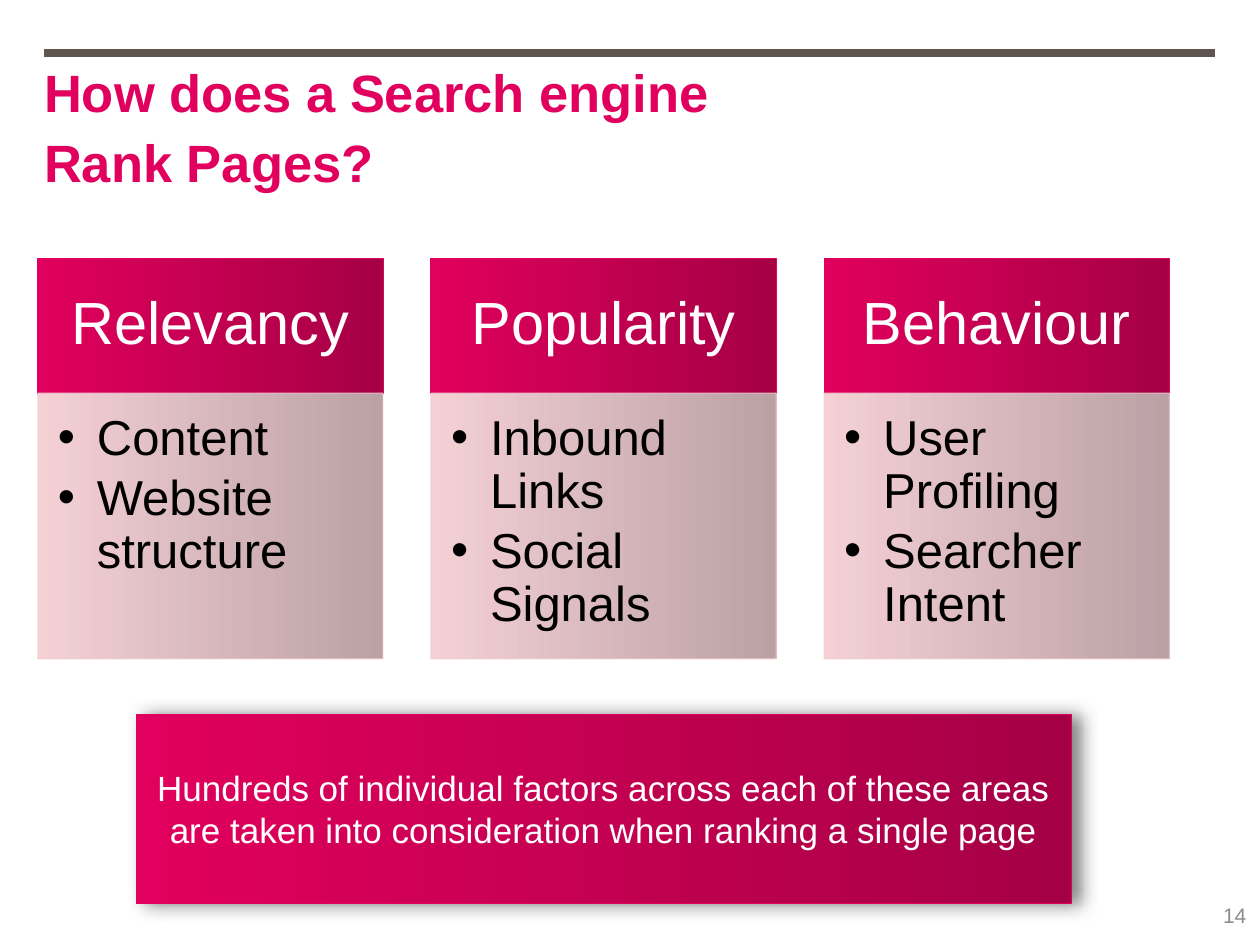
from lxml.etree import SubElement as Sub
from pptx import Presentation
from pptx.dml.color import RGBColor as Rgb
from pptx.enum.shapes import MSO_CONNECTOR as Conn, MSO_SHAPE as Kind
from pptx.enum.text import MSO_ANCHOR as Anchor, PP_ALIGN as Align
from pptx.oxml.ns import qn
from pptx.util import Inches, Pt

PINK, WINE, ROSE, MAUVE = "E1005D", "A60045", "F4CCD2", "B4979B"
WHITE, BLACK, GREY, BROWN = "FFFFFF", "000000", "8C8C8C", "5F574F"
LEFT, STEP, WIDE = 3, 31.2, 27.4
TOP, HEAD, BODY = 20.5, 10.7, 21.1
AREAS = {
    "Relevancy": ["Content", "Website structure"],
    "Popularity": ["Inbound Links", "Social Signals"],
    "Behaviour": ["User Profiling", "Searcher Intent"],
}


def tint(code):
    """Turn a hex string into a colour."""
    return Rgb.from_string(code)


class Deck:
    """Holds the style and the current slide, on a grid of 100 by 75 cells."""

    font = "Arial"

    def __init__(self):
        """Open a deck with one blank slide."""
        self.prs = Presentation()
        self.prs.slide_width, self.prs.slide_height = Inches(10), Inches(7.5)
        self.cell = self.prs.slide_width / 100
        self.slide = self.prs.slides.add_slide(self.prs.slide_layouts[6])

    def span(self, *cells):
        """Turn grid cells into lengths."""
        return [round(n * self.cell) for n in cells]

    def rule(self, x, y, end, color, width):
        """Draw a level line."""
        line = self.slide.shapes.add_connector(Conn.STRAIGHT, *self.span(x, y, end, y))
        line.line.color.rgb, line.line.width = tint(color), Pt(width)
        Sub(line._element.spPr, qn("a:effectLst"))

    def fill_text(self, shape, lines, size, color, inset, align=Align.LEFT,
                  anchor=Anchor.TOP, bold=False, lead=1.0, after=0):
        """Set the text of a shape."""
        frame = shape.text_frame
        frame.text = "\n".join(lines)
        frame.word_wrap, frame.vertical_anchor = True, anchor
        (frame.margin_left, frame.margin_top,
         frame.margin_right, frame.margin_bottom) = self.span(*inset)
        for para in frame.paragraphs:
            para.alignment, para.line_spacing = align, lead
            para.space_after = Pt(after)
            for run in para.runs:
                font = run.font
                font.name, font.size, font.bold = self.font, Pt(size), bold
                font.color.rgb = tint(color)

    def label(self, area, text, size, color, **look):
        """Add a plain text box."""
        box = self.slide.shapes.add_textbox(*self.span(*area))
        self.fill_text(box, [text], size, color, (0, 0, 0, 0), **look)

    def panel(self, area, start, end, alpha=100):
        """Add a box with a gradient from left to right."""
        box = self.slide.shapes.add_shape(Kind.RECTANGLE, *self.span(*area))
        box.shadow.inherit = False
        box.fill.gradient()
        box.fill.gradient_angle = 0
        for place, (stop, code) in enumerate(zip(box.fill.gradient_stops, (start, end))):
            stop.color.rgb, stop.position = tint(code), place
        box.line.color.rgb, box.line.width = tint(start), Pt(0.5)
        if alpha < 100:
            for node in box._element.spPr.iter(qn("a:srgbClr")):
                Sub(node, qn("a:alpha"), val=str(alpha * 1000))
        return box

    def bullet(self, box, indent):
        """Give each paragraph a hanging bullet."""
        gap = self.span(indent)[0]
        for para in box.text_frame.paragraphs:
            props = para._p.get_or_add_pPr()
            props.set("marL", str(gap))
            props.set("indent", str(-gap))
            Sub(props, qn("a:buFont"), typeface=self.font)
            Sub(props, qn("a:buChar"), char="•")

    def shade(self, box, blur, dist, alpha):
        """Cast a soft black shadow to the right."""
        effects = box._element.spPr.find(qn("a:effectLst"))
        cast = Sub(effects, qn("a:outerShdw"), blurRad=str(Pt(blur)),
                   dist=str(Pt(dist)), dir="0", algn="ctr", rotWithShape="0")
        ink = Sub(cast, qn("a:srgbClr"), val=BLACK)
        Sub(ink, qn("a:alpha"), val=str(alpha * 1000))

    def card(self, x, name, items):
        """Add a heading box above a bulleted box."""
        head = self.panel((x, TOP, WIDE, HEAD), PINK, WINE)
        self.fill_text(head, [name], 34, WHITE, (2.6, 1.5, 2.6, 1.5),
                       Align.CENTER, Anchor.MIDDLE, lead=0.9)
        body = self.panel((x, TOP + HEAD, WIDE, BODY), ROSE, MAUVE, 90)
        self.fill_text(body, items, 28, BLACK, (1.6, 1.6, 2.2, 2.4), lead=0.9, after=4.2)
        self.bullet(body, 3.1)

    def banner(self, area, text):
        """Add the shaded closing box."""
        box = self.panel(area, PINK, WINE)
        self.fill_text(box, [text], 20, WHITE, (1, 0.5, 1, 0.5),
                       Align.CENTER, Anchor.MIDDLE)
        self.shade(box, 10, 5, 50)


def main():
    """Build and save the slide."""
    deck = Deck()
    deck.rule(3.5, 4.2, 96.4, BROWN, 4.5)
    deck.label((3.5, 4.3, 59.1, 11.1), "How does a Search engine Rank Pages?",
               30, PINK, bold=True, lead=1.1)
    for i, (name, items) in enumerate(AREAS.items()):
        deck.card(LEFT + i * STEP, name, items)
    deck.banner((10.8, 56.7, 74.2, 15),
                "Hundreds of individual factors across each of these areas "
                "are taken into consideration when ranking a single page")
    deck.label((96.6, 71.1, 2.8, 3), "14", 12, GREY,
               align=Align.CENTER, anchor=Anchor.MIDDLE)
    deck.prs.save("out.pptx")


if __name__ == "__main__":
    main()
